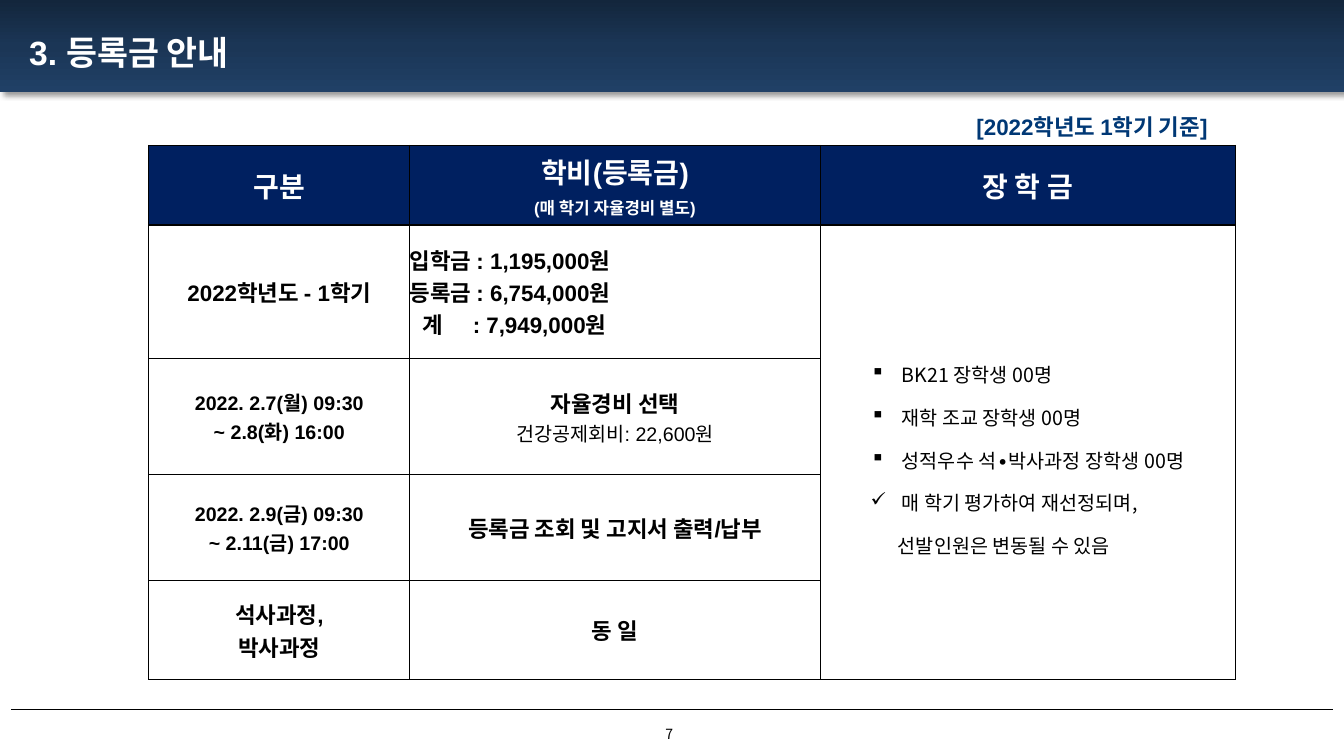
from copy import deepcopy
from dataclasses import dataclass

from lxml import etree
from pptx import Presentation
from pptx.dml.color import RGBColor as Rgb
from pptx.enum import shapes, text
from pptx.oxml import ns
from pptx.util import Pt


@dataclass(frozen=True)
class Theme:
    latin: str = "Arial"
    hangul: str = "Noto Sans CJK KR"
    ink: str = "000000"
    paper: str = "FFFFFF"
    navy: str = "002060"
    blue: str = "003875"
    band: tuple = ("13263C", "1B3656", "204066")
    title: int = 24
    head: int = 20
    body: int = 16
    small: int = 14
    note: int = 12
    page: int = 10


T = Theme()
LEFT, MID = text.PP_ALIGN.LEFT, text.PP_ALIGN.CENTER


def sub(node, tag, **attrs):
    return etree.SubElement(node, ns.qn(tag), attrs)


def write(frame, line, new=True, size=T.body, color=T.ink, bold=True,
          font=T.latin, align=LEFT, above=0, lead=None,
          indent=0, hang=0, mark=None, tab=None):
    """Write one paragraph, in the first one of the frame unless new."""
    par = frame.add_paragraph() if new else frame.paragraphs[0]
    par.alignment = align
    if lead:
        par.line_spacing = lead
    if above:
        par.space_before = Pt(above)
    props = par._p.get_or_add_pPr()
    if indent:
        props.set("marL", str(Pt(indent)))
        props.set("indent", str(Pt(-hang)))
    if mark:
        sub(props, "a:buChar", char=mark)
    if tab:
        stops = sub(props, "a:tabLst")
        sub(stops, "a:tab", pos=str(Pt(tab)), algn="l")
    run = par.add_run()
    run.text = line
    run.font.size, run.font.bold, run.font.name = Pt(size), bold, font
    run.font.color.rgb = Rgb.from_string(color)
    sub(run._r.get_or_add_rPr(), "a:ea", typeface=T.hangul)


def label(slide, box, line, **fmt):
    frame = slide.shapes.add_textbox(*map(Pt, box)).text_frame
    frame.word_wrap = True
    write(frame, line, new=False, **fmt)
    return frame


def header(slide, box, line):
    x, y, w, h = box
    # Gradient band with a soft shadow
    band = slide.shapes.add_shape(shapes.MSO_SHAPE.RECTANGLE, *map(Pt, box))
    band.line.fill.background()
    band.fill.gradient()
    band.fill.gradient_angle = 270
    stops = band._element.spPr.find(".//" + ns.qn("a:gsLst"))
    stops.insert(1, deepcopy(stops[0]))
    for i, (stop, tone) in enumerate(zip(band.fill.gradient_stops, T.band)):
        stop.position = i / 2
        stop.color.rgb = Rgb.from_string(tone)
    glow = sub(sub(band._element.spPr, "a:effectLst"), "a:outerShdw",
               blurRad=str(Pt(4)), dist=str(Pt(3)), dir="2700000",
               algn="tl", rotWithShape="0")
    sub(sub(glow, "a:srgbClr", val=T.ink), "a:alpha", val="40000")
    # Title, in front of the band
    title = slide.shapes.title
    title.element.addprevious(band.element)
    title.left, title.top = Pt(x + 13.7), Pt(y + 20.9)
    title.width, title.height = Pt(640), Pt(33)
    frame = title.text_frame
    frame.auto_size = text.MSO_AUTO_SIZE.NONE
    frame.vertical_anchor = text.MSO_ANCHOR.MIDDLE
    write(frame, line, new=False, size=T.title, color=T.paper)


def edge(cell):
    props = cell._tc.get_or_add_tcPr()
    for i, side in enumerate(("a:lnL", "a:lnR", "a:lnT", "a:lnB")):
        line = etree.Element(ns.qn(side), w=str(Pt(1)))
        sub(sub(line, "a:solidFill"), "a:srgbClr", val=T.ink)
        props.insert(i, line)


def fees(slide, box, cols, rows, data):
    grid = slide.shapes.add_table(len(rows), len(cols), *map(Pt, box)).table
    grid.first_row = grid.horz_banding = False
    for col, width in zip(grid.columns, cols):
        col.width = Pt(width)
    for row, height in zip(grid.rows, rows):
        row.height = Pt(height)
    grid.cell(1, 2).merge(grid.cell(len(rows) - 1, 2))
    for r in range(len(rows)):
        for c in range(len(cols)):
            cell = grid.cell(r, c)
            cell.margin_left = cell.margin_right = 0
            cell.margin_top = cell.margin_bottom = 0
            cell.vertical_anchor = text.MSO_ANCHOR.MIDDLE
            if r == 0:
                cell.fill.solid()
                cell.fill.fore_color.rgb = Rgb.from_string(T.navy)
            else:
                cell.fill.background()
            edge(cell)
            for i, (line, fmt) in enumerate(data.get((r, c), [])):
                write(cell.text_frame, line, new=i > 0, **fmt)


def footer(slide, box, page):
    x, y, w, h = box
    rule = slide.shapes.add_connector(
        shapes.MSO_CONNECTOR.STRAIGHT, Pt(x), Pt(y), Pt(x + w), Pt(y))
    rule.line.width = Pt(1)
    rule.line.color.rgb = Rgb.from_string(T.ink)
    sub(rule._element.spPr, "a:effectLst")
    frame = label(slide, (x + w / 2 - 15.5, y + 8, 27, h - 8), page,
                  size=T.page, bold=False, font=T.hangul, align=MID)
    frame.vertical_anchor = text.MSO_ANCHOR.MIDDLE


def main():
    prs = Presentation()
    prs.slide_width, prs.slide_height = Pt(960), Pt(540)
    slide = prs.slides.add_slide(prs.slide_layouts[5])

    # Formats of the table cells
    head = dict(size=T.head, color=T.paper, align=MID)
    sub_head = dict(head, size=T.note, above=2.4)
    main_text = dict(align=MID)
    date = dict(align=MID, size=T.small)
    plain = dict(date, bold=False)
    item = dict(size=T.small, bold=False, font=T.hangul, lead=1.5,
                indent=58.3, hang=22.3, mark="▪")
    data = {
        (0, 0): [("구분", head)],
        (0, 1): [("학비(등록금)", head), ("(매 학기 자율경비 별도)", sub_head)],
        (0, 2): [("장 학 금", head)],
        (1, 0): [("2022학년도 - 1학기", main_text)],
        (1, 1): [("입학금 : 1,195,000원", {}),
                 ("등록금 : 6,754,000원", {}),
                 ("계\t: 7,949,000원", dict(indent=9, tab=51.5))],
        (1, 2): [("BK21 장학생 00명", item),
                 ("재학 조교 장학생 00명", item),
                 ("성적우수 석∙박사과정 장학생 00명", item),
                 ("매 학기 평가하여 재선정되며,", dict(item, mark="✓")),
                 ("선발인원은 변동될 수 있음",
                  dict(item, indent=55.5, hang=0, mark=None))],
        (2, 0): [("2022. 2.7(월) 09:30", date), ("~ 2.8(화) 16:00", date)],
        (2, 1): [("자율경비 선택", main_text),
                 ("건강공제회비: 22,600원", plain)],
        (3, 0): [("2022. 2.9(금) 09:30", date), ("~ 2.11(금) 17:00", date)],
        (3, 1): [("등록금 조회 및 고지서 출력/납부", main_text)],
        (4, 0): [("석사과정,", main_text), ("박사과정", main_text)],
        (4, 1): [("동 일", main_text)],
    }

    header(slide, (0, 0, 960, 65.6), "3. 등록금 안내")
    label(slide, (690.4, 77, 219, 26.6), "[2022학년도 1학기 기준]", color=T.blue)
    fees(slide, (106.3, 103.9, 776.3, 381.6), (186.4, 293.2, 296.7),
         (56.9, 95.5, 82.5, 76, 70.7), data)
    footer(slide, (8, 507, 944, 27), "7")
    prs.save("out.pptx")


if __name__ == "__main__":
    main()
